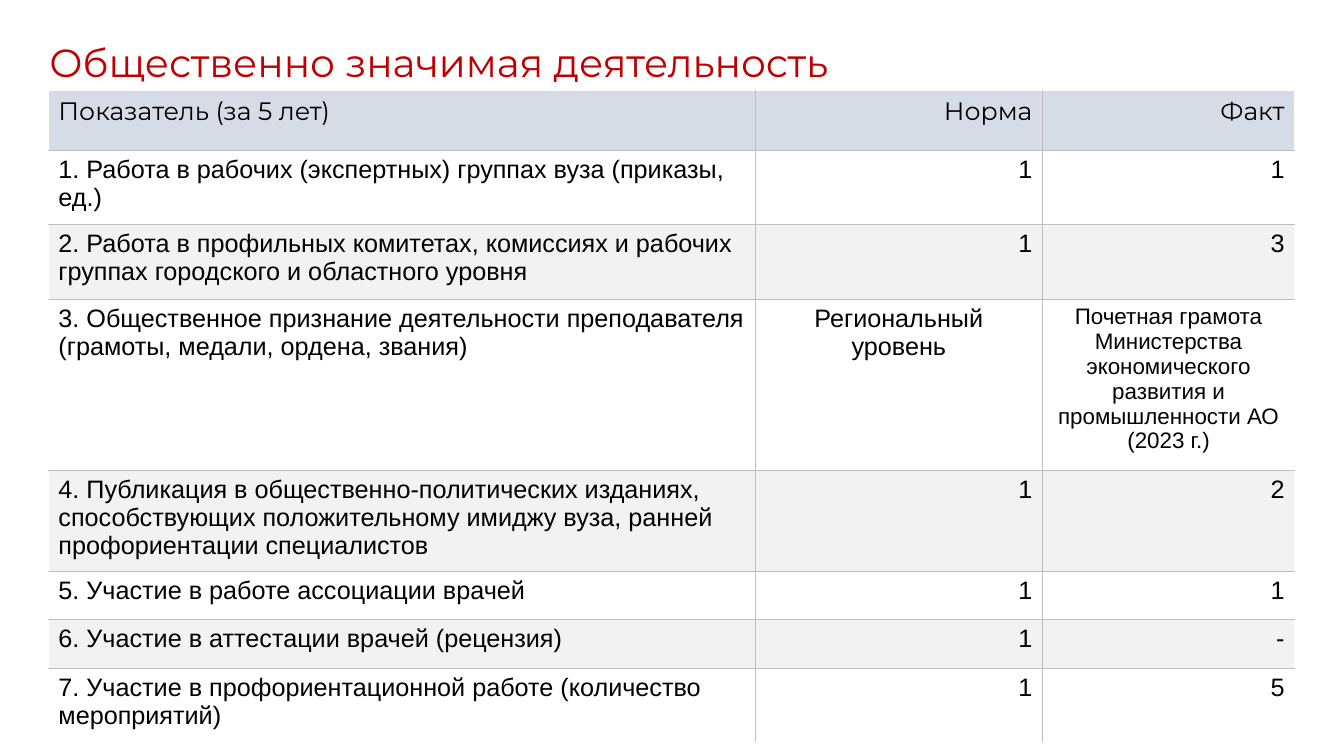
from lxml.etree import SubElement
from pptx import Presentation
from pptx.dml.color import RGBColor
from pptx.enum.text import MSO_ANCHOR, PP_ALIGN
from pptx.oxml.ns import qn
from pptx.util import Inches, Pt

COLORS = {"title": "C00000", "text": "000000", "head": "D6DCE5",
          "band": "F2F2F2", "grid": "BFBFBF", "edge": "FFFFFF"}
LEFT, MID, RIGHT = PP_ALIGN.LEFT, PP_ALIGN.CENTER, PP_ALIGN.RIGHT

WIDTHS = [7.01, 2.85, 2.5]
HEIGHTS = [0.59, 0.74, 0.74, 1.7, 1, 0.48, 0.48, 0.74]
ROWS = [
    ("Показатель (за 5 лет)", "Норма", "Факт"),
    ("1. Работа в рабочих (экспертных) группах вуза (приказы, ед.)", "1", "1"),
    ("2. Работа в профильных комитетах, комиссиях и рабочих группах "
     "городского и областного уровня", "1", "3"),
    ("3. Общественное признание деятельности преподавателя "
     "(грамоты, медали, ордена, звания)", "Региональный уровень",
     "Почетная грамота Министерства экономического развития и "
     "промышленности АО (2023 г.)"),
    ("4. Публикация в общественно-политических изданиях, способствующих "
     "положительному имиджу вуза, ранней профориентации специалистов", "1", "2"),
    ("5. Участие в работе ассоциации врачей", "1", "1"),
    ("6. Участие в аттестации врачей (рецензия)", "1", "-"),
    ("7. Участие в профориентационной работе (количество мероприятий)", "1", "5"),
]
AWARD = 3


class Deck:
    def __init__(self):
        self.prs = Presentation()
        self.prs.slide_width, self.prs.slide_height = Inches(13.33), Inches(7.5)
        self.slide = self.prs.slides.add_slide(self.prs.slide_layouts[5])

    def label(self, frame, text, align=LEFT, color="text", **style):
        frame.text = text
        para = frame.paragraphs[0]
        para.alignment = align
        for name, value in style.items():
            setattr(para.font, name, value)
        para.font.color.rgb = RGBColor.from_string(COLORS[color])

    def title(self, text, left, top, width, height):
        shape = self.slide.shapes.title
        box = {"left": left, "top": top, "width": width, "height": height}
        for name, value in box.items():
            setattr(shape, name, Inches(value))
        shape.text_frame.word_wrap = True
        shape.text_frame.vertical_anchor = MSO_ANCHOR.TOP
        self.label(shape.text_frame, text, color="title",
                   name="Montserrat", size=Pt(28))

    def border(self, cell, outer):
        """Draw all four sides; those named in outer blend into the slide."""
        props = cell._tc.get_or_add_tcPr()
        for side in "LRTB":
            line = SubElement(props, qn(f"a:ln{side}"), w=str(Pt(1)))
            fill = SubElement(line, qn("a:solidFill"))
            color = COLORS["edge" if side in outer else "grid"]
            SubElement(fill, qn("a:srgbClr"), val=color)

    def shade(self, cell, row):
        if row % 2:
            cell.fill.background()
        else:
            cell.fill.solid()
            color = COLORS["band" if row else "head"]
            cell.fill.fore_color.rgb = RGBColor.from_string(color)

    def table(self, left, top):
        size = [Inches(v) for v in (left, top, sum(WIDTHS), sum(HEIGHTS))]
        table = self.slide.shapes.add_table(len(ROWS), len(WIDTHS), *size).table
        table.first_row = table.horz_banding = False
        for col, width in zip(table.columns, WIDTHS):
            col.width = Inches(width)
        for row, height in zip(table.rows, HEIGHTS):
            row.height = Inches(height)
        last_row, last_col = len(ROWS) - 1, len(WIDTHS) - 1
        for r, texts in enumerate(ROWS):
            for c, text in enumerate(texts):
                cell = table.cell(r, c)
                edges = {"L": c == 0, "R": c == last_col,
                         "T": r == 0, "B": r == last_row}
                self.border(cell, [side for side, out in edges.items() if out])
                self.shade(cell, r)
                align = LEFT if c == 0 else MID if r == AWARD else RIGHT
                small = r == AWARD and c == last_col
                self.label(cell.text_frame, text, align, bold=False,
                           name="Arial" if r else "Montserrat",
                           size=Pt(16 if small else 18))


def main():
    deck = Deck()
    deck.title("Общественно значимая деятельность", 0.39, 0.33, 8.66, 0.57)
    deck.table(0.48, 0.9)
    deck.prs.save("out.pptx")


if __name__ == "__main__":
    main()
